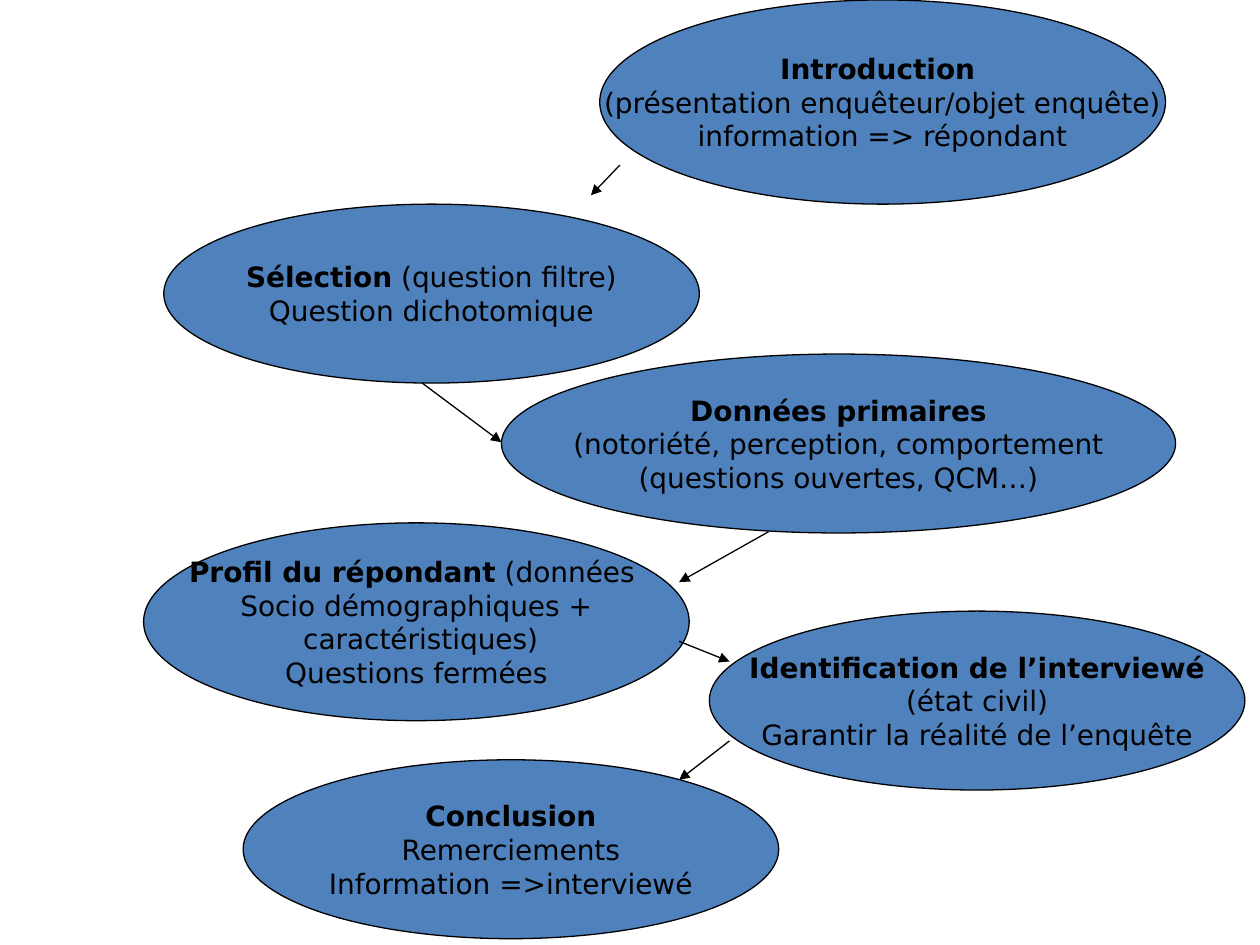
from lxml import etree
from pptx import Presentation
from pptx.dml.color import RGBColor
from pptx.enum.shapes import MSO_CONNECTOR, MSO_SHAPE
from pptx.enum.text import MSO_ANCHOR, PP_ALIGN
from pptx.oxml.ns import qn
from pptx.util import Inches, Pt

OVAL = MSO_SHAPE.OVAL
LINE = MSO_CONNECTOR.STRAIGHT
MIDDLE = MSO_ANCHOR.MIDDLE
CENTER = PP_ALIGN.CENTER
BLUE, BLACK = "4F81BD", "000000"
FONT = {"name": "DejaVu Sans", "size": Pt(16)}


def color(code):
    return RGBColor.from_string(code)


def outline(line):
    line.color.rgb = color(BLACK)
    line.width = Pt(0.75)


prs = Presentation()
prs.slide_width, prs.slide_height = Inches(10), Inches(7.5)
slide = prs.slides.add_slide(prs.slide_layouts[6])

# Survey steps: left, top, width, height, bold title, rest of the text
steps = [
    (4.76, 0, 4.49, 1.62, "Introduction ",
     "\n(présentation enquêteur/objet enquête)\ninformation => répondant"),
    (1.3, 1.62, 4.25, 1.42, "Sélection",
     " (question filtre)\nQuestion dichotomique"),
    (3.98, 2.81, 5.35, 1.42, "Données primaires",
     "\n(notoriété, perception, comportement\n(questions ouvertes, QCM…)"),
    (1.14, 4.15, 4.33, 1.57, "Profil du répondant",
     " (données \nSocio démographiques +\n caractéristiques)\nQuestions fermées"),
    (5.63, 4.85, 4.25, 1.42, "Identification de l’interviewé",
     "\n(état civil)\nGarantir la réalité de l’enquête"),
    (1.93, 6.03, 4.25, 1.42, "Conclusion",
     "\nRemerciements\nInformation =>interviewé"),
]
for *box, title, rest in steps:
    oval = slide.shapes.add_shape(OVAL, *map(Inches, box))
    oval.shadow.inherit = False
    oval.fill.solid()
    oval.fill.fore_color.rgb = color(BLUE)
    outline(oval.line)
    frame = oval.text_frame
    frame.word_wrap = False
    frame.vertical_anchor = MIDDLE

    # The title shares its line with the start of the rest
    first, *lines = rest.split("\n")
    rows = [[(title, True), (first, False)]] + [[(text, False)] for text in lines]
    for i, row in enumerate(rows):
        para = frame.add_paragraph() if i else frame.paragraphs[0]
        para.alignment = CENTER
        for text, bold in row:
            if not text:
                continue
            run = para.add_run()
            run.text = text
            run.font.bold = bold
            run.font.color.rgb = color(BLACK)
            for key, value in FONT.items():
                setattr(run.font, key, value)

# Arrows from step to step: start x, y, end x, y
arrows = [
    (4.92, 1.31, 4.69, 1.55),
    (3.35, 3.04, 3.98, 3.51),
    (6.1, 4.22, 5.39, 4.62),
    (5.39, 5.09, 5.79, 5.25),
    (5.79, 5.88, 5.39, 6.19),
]
for ends in arrows:
    arrow = slide.shapes.add_connector(LINE, *map(Inches, ends))
    outline(arrow.line)
    props = arrow._element.spPr
    etree.SubElement(props.find(qn("a:ln")), qn("a:tailEnd"), type="triangle")
    etree.SubElement(props, qn("a:effectLst"))

prs.save("out.pptx")
